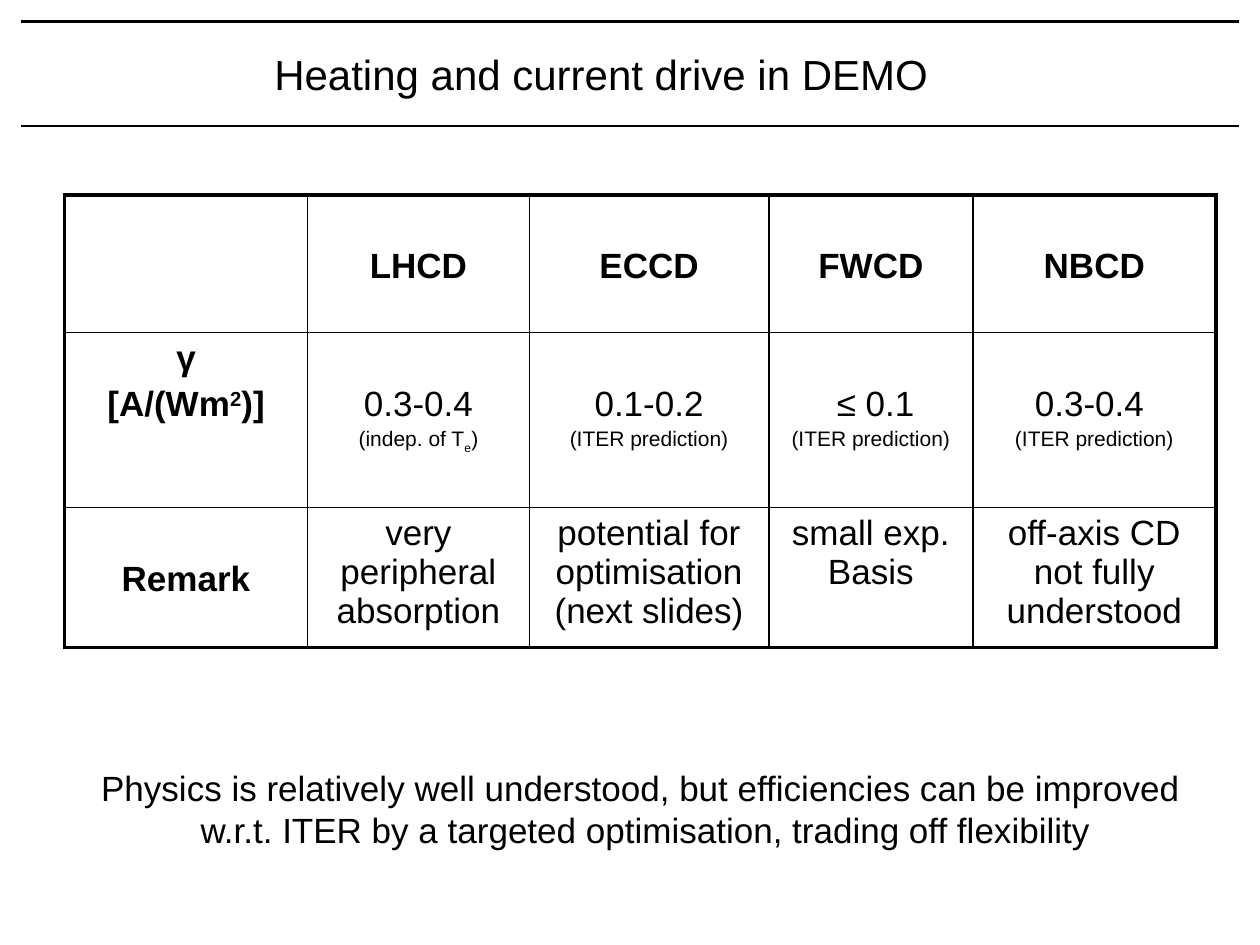
"""Build the slide on heating and current drive in DEMO."""
from lxml.etree import SubElement
from pptx import Presentation
from pptx.dml.color import RGBColor
from pptx.enum.shapes import MSO_CONNECTOR
from pptx.enum.text import PP_ALIGN
from pptx.oxml import parse_xml
from pptx.oxml.ns import nsdecls, qn
from pptx.util import Cm, Pt

COLORS = {"ink": "000000", "paper": "FFFFFF"}
FONT = "Arial"
TITLE = ["Heating and current drive in DEMO"]
SUMMARY = [
    "Physics is relatively well understood, but efficiencies can be improved ",
    "w.r.t. ITER by a targeted optimisation, trading off flexibility",
]
PREDICTION = "(ITER prediction)"
CELLS = [
    [[], ["LHCD"], ["ECCD"], ["FWCD"], ["NBCD"]],
    [
        ["γ", [("[Α/(Wm", 0), ("2", 30), (")]", 0)]],
        ["0.3-0.4", [("(indep. of T", 0), ("e", -25), (")", 0)]],
        ["0.1-0.2", PREDICTION],
        [" ≤ 0.1", PREDICTION],
        ["0.3-0.4 ", PREDICTION],
    ],
    [
        ["Remark"],
        ["very peripheral absorption"],
        ["potential for optimisation (next slides)"],
        ["small exp. Basis"],
        ["off-axis CD not fully understood"],
    ],
]
COL_WIDTHS = [4.9, 4.47, 4.83, 4.11, 4.9]
ROW_HEIGHTS = [2.77, 3.53, 2.82]
RULE_X = (0.43, 24.97)
RULE_YS = (0.43, 2.54)
MARGIN_TOP, MARGIN_LOWERED = 0.13, 1.05
THIN, THICK = 1, 2.25


def write_line(p, line, size, bold=False):
    parts = [(line, 0)] if isinstance(line, str) else line
    for text, baseline in parts:
        r = p.add_run()
        r.text = text
        formats = {"name": FONT, "size": Pt(size), "bold": bold}
        for name, value in formats.items():
            setattr(r.font, name, value)
        r.font.color.rgb = RGBColor.from_string(COLORS["ink"])
        if baseline:
            r.font._element.set("baseline", str(baseline * 1000))


def add_text(s, box, lines, size, align):
    tf = s.shapes.add_textbox(*map(Cm, box)).text_frame
    tf.word_wrap = False
    for i, line in enumerate(lines):
        p = tf.add_paragraph() if i else tf.paragraphs[0]
        p.alignment = align
        write_line(p, line, size)


def add_rule(s, y):
    x1, x2 = RULE_X
    line = s.shapes.add_connector(MSO_CONNECTOR.STRAIGHT, Cm(x1), Cm(y), Cm(x2), Cm(y))
    line.line.color.rgb = RGBColor.from_string(COLORS["ink"])
    line.line.width = Pt(1.5)
    SubElement(line._element.spPr, qn("a:effectLst"))


def set_borders(cell, widths):
    tcPr = cell._tc.get_or_add_tcPr()
    for i, (side, width) in enumerate(widths.items()):
        tcPr.insert(i, parse_xml(
            f'<a:ln{side} {nsdecls("a")} w="{Pt(width)}"><a:solidFill>'
            f'<a:srgbClr val="{COLORS["ink"]}"/></a:solidFill></a:ln{side}>'))


def fill_cell(cell, lines, row, col):
    bold = row == 0 or col == 0
    at_top = (row == 1 and col == 0) or (row == 2 and col > 0)
    cell.margin_top = Cm(MARGIN_TOP if at_top else MARGIN_LOWERED)
    cell.fill.background()
    for i, line in enumerate(lines):
        size = 12 if i and not bold else 20
        p = cell.text_frame.add_paragraph() if i else cell.text_frame.paragraphs[0]
        p.alignment = PP_ALIGN.CENTER
        if i:
            p.space_before = Pt(0.2 * size)
        write_line(p, line, size, bold)
    last_row, last_col = len(ROW_HEIGHTS) - 1, len(COL_WIDTHS) - 1
    outer = {"L": col == 0, "R": col == last_col, "T": row == 0, "B": row == last_row}
    set_borders(cell, {side: THICK if edge else THIN for side, edge in outer.items()})


def add_comparison(s):
    table = s.shapes.add_table(
        len(ROW_HEIGHTS), len(COL_WIDTHS), Cm(1.3), Cm(3.93),
        Cm(sum(COL_WIDTHS)), Cm(sum(ROW_HEIGHTS))).table
    table.first_row = table.horz_banding = False
    for column, width in zip(table.columns, COL_WIDTHS):
        column.width = Cm(width)
    for row, height in zip(table.rows, ROW_HEIGHTS):
        row.height = Cm(height)
    for row, row_cells in enumerate(CELLS):
        for col, lines in enumerate(row_cells):
            fill_cell(table.cell(row, col), lines, row, col)


def main():
    prs = Presentation()
    prs.slide_width, prs.slide_height = Cm(25.4), Cm(19.05)
    s = prs.slides.add_slide(prs.slide_layouts[6])
    s.background.fill.solid()
    s.background.fill.fore_color.rgb = RGBColor.from_string(COLORS["paper"])
    for y in RULE_YS:
        add_rule(s, y)
    add_text(s, (5.28, 0.86, 13.82, 1.27), TITLE, 24, PP_ALIGN.LEFT)
    add_comparison(s)
    add_text(s, (1.7, 15.32, 22.63, 1.96), SUMMARY, 20, PP_ALIGN.CENTER)
    prs.save("out.pptx")


if __name__ == "__main__":
    main()
